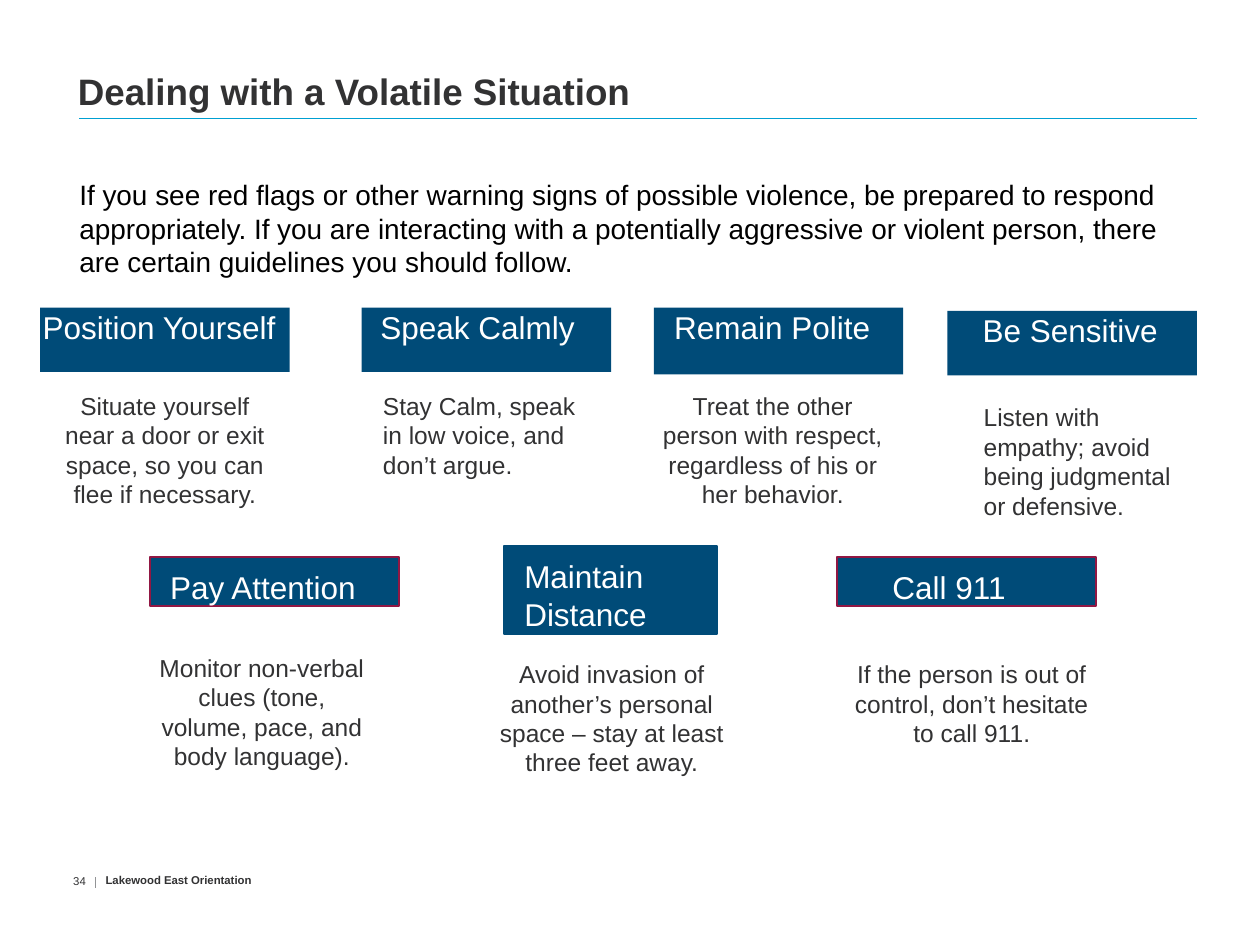
"""Build a training slide on dealing with a volatile situation."""
from lxml import etree
from pptx import Presentation
from pptx import util as u
from pptx.dml.color import RGBColor
from pptx.enum import shapes, text
from pptx.oxml.ns import qn

COLOURS = {
    "ink": "323233",
    "black": "000000",
    "white": "FFFFFF",
    "banner": "004B78",
    "edge": "911743",
    "rule": "00A0D2",
    "divider": "929496",
}
LEFT, CENTRE, RIGHT = text.PP_ALIGN.LEFT, text.PP_ALIGN.CENTER, text.PP_ALIGN.RIGHT
TOP, MIDDLE, BOTTOM = text.MSO_ANCHOR.TOP, text.MSO_ANCHOR.MIDDLE, text.MSO_ANCHOR.BOTTOM
NO_INSETS = (0, 0, 0, 0)
CAPTION_INSETS = (0.25, 0.13, 0.25, 0.13)
NARROW_INSETS = (0.38, 0.13, 0.38, 0.13)


class SlideBuilder:
    def __init__(self, page, font="Arial"):
        self.page = page
        self.font = font

    def colour(self, name):
        return RGBColor.from_string(COLOURS[name])

    def fill_text(self, box, words, size, colour, bold=False, align=LEFT,
                  anchor=TOP, insets=NO_INSETS):
        frame = box.text_frame
        frame.word_wrap = True
        frame.vertical_anchor = anchor
        (frame.margin_left, frame.margin_top,
         frame.margin_right, frame.margin_bottom) = map(u.Cm, insets)
        para = frame.paragraphs[0]
        para.alignment = align
        span = para.add_run()
        span.text = words
        span.font.name = self.font
        span.font.size = u.Pt(size)
        span.font.bold = bold
        span.font.color.rgb = self.colour(colour)
        return para

    def label(self, area, words, size, colour="ink", **style):
        box = self.page.shapes.add_textbox(*map(u.Cm, area))
        return self.fill_text(box, words, size, colour, **style)

    def banner(self, area, words, indent, drop=0, edge=None):
        box = self.page.shapes.add_shape(shapes.MSO_SHAPE.RECTANGLE, *map(u.Cm, area))
        box.shadow.inherit = False
        box.fill.solid()
        box.fill.fore_color.rgb = self.colour("banner")
        if edge:
            box.line.color.rgb = self.colour(edge)
            box.line.width = u.Pt(1.2)
        else:
            box.line.fill.background()
        self.fill_text(box, words, 18, "white", insets=(indent, drop, 0, 0))

    def line(self, start, end, colour, width):
        rule = self.page.shapes.add_connector(
            shapes.MSO_CONNECTOR.STRAIGHT, *map(u.Cm, start + end))
        rule.line.color.rgb = self.colour(colour)
        rule.line.width = u.Pt(width)
        etree.SubElement(rule._element.spPr, qn("a:effectLst"))


def main():
    deck = Presentation()
    deck.slide_width, deck.slide_height = u.Cm(25.4), u.Cm(19.05)
    builder = SlideBuilder(deck.slides.add_slide(deck.slide_layouts[6]))

    builder.label((1.12, 17.3, 0.61, 0.91), "34", 6.5, align=RIGHT, anchor=MIDDLE)
    builder.line((1.93, 17.68), (1.93, 17.91), "divider", 0.5)
    builder.line((1.6, 2.39), (24.13, 2.39), "rule", 1)
    title = builder.label((1.57, 1.14, 22.53, 1.14), "Dealing with a Volatile Situation",
                          21, bold=True, anchor=BOTTOM)
    title.line_spacing = u.Pt(23)
    builder.label((2.13, 17.53, 10.34, 0.43), "Lakewood East Orientation", 6.5,
                  bold=True, anchor=MIDDLE)
    builder.label(
        (1.6, 3.58, 22.53, 2.06),
        "If you see red flags or other warning signs of possible violence, be prepared "
        "to respond appropriately. If you are interacting with a potentially aggressive "
        "or violent person, there are certain guidelines you should follow.",
        16, "black")

    upper_banners = [
        (0.81, 6.2, 1.3, "Position Yourself", 0.05),
        (7.29, 6.2, 1.3, "Speak Calmly", 0.38),
        (13.18, 6.2, 1.35, "Remain Polite", 0.41),
        (19.1, 6.27, 1.3, "Be Sensitive", 0.71),
    ]
    for left, top, height, words, indent in upper_banners:
        builder.banner((left, top, 5.03, height), words, indent)

    lower_banners = [
        ((3.02, 11.23, 5.03, 0.99), "Pay Attention", 0.41, "edge"),
        ((10.16, 11, 4.29, 1.78), "Maintain Distance", 0.41, "banner"),
        ((16.87, 11.23, 5.23, 0.99), "Call 911", 1.12, "edge"),
    ]
    for area, words, indent, edge in lower_banners:
        builder.banner(area, words, indent, drop=0.23, edge=edge)

    captions = [
        ((0.81, 7.75, 5.03, 2.64), CENTRE, NARROW_INSETS,
         "Situate yourself near a door or exit space, so you can flee if necessary."),
        ((7.47, 7.75, 4.88, 2.06), LEFT, (0.25, 0.13, 0.5, 0.13),
         "Stay Calm, speak in low voice, and don’t argue."),
        ((12.85, 7.75, 5.46, 2.64), CENTRE, NARROW_INSETS,
         "Treat the other person with respect, regardless of his or her behavior."),
        ((19.58, 7.98, 4.52, 2.64), LEFT, CAPTION_INSETS,
         "Listen with empathy; avoid being judgmental or defensive."),
        ((3.02, 13.16, 4.52, 2.39), CENTRE, (0.13, 0, 0.13, 0),
         "Monitor non-verbal clues (tone, volume, pace, and body language)."),
        ((9.35, 13.16, 5.97, 2.64), CENTRE, NARROW_INSETS,
         "Avoid invasion of another’s personal space – stay at least three feet away."),
        ((16.87, 13.16, 5.44, 2.06), CENTRE, CAPTION_INSETS,
         "If the person is out of control, don’t hesitate to call 911."),
    ]
    for area, align, insets, words in captions:
        builder.label(area, words, 14, align=align, insets=insets)

    deck.save("out.pptx")


if __name__ == "__main__":
    main()
